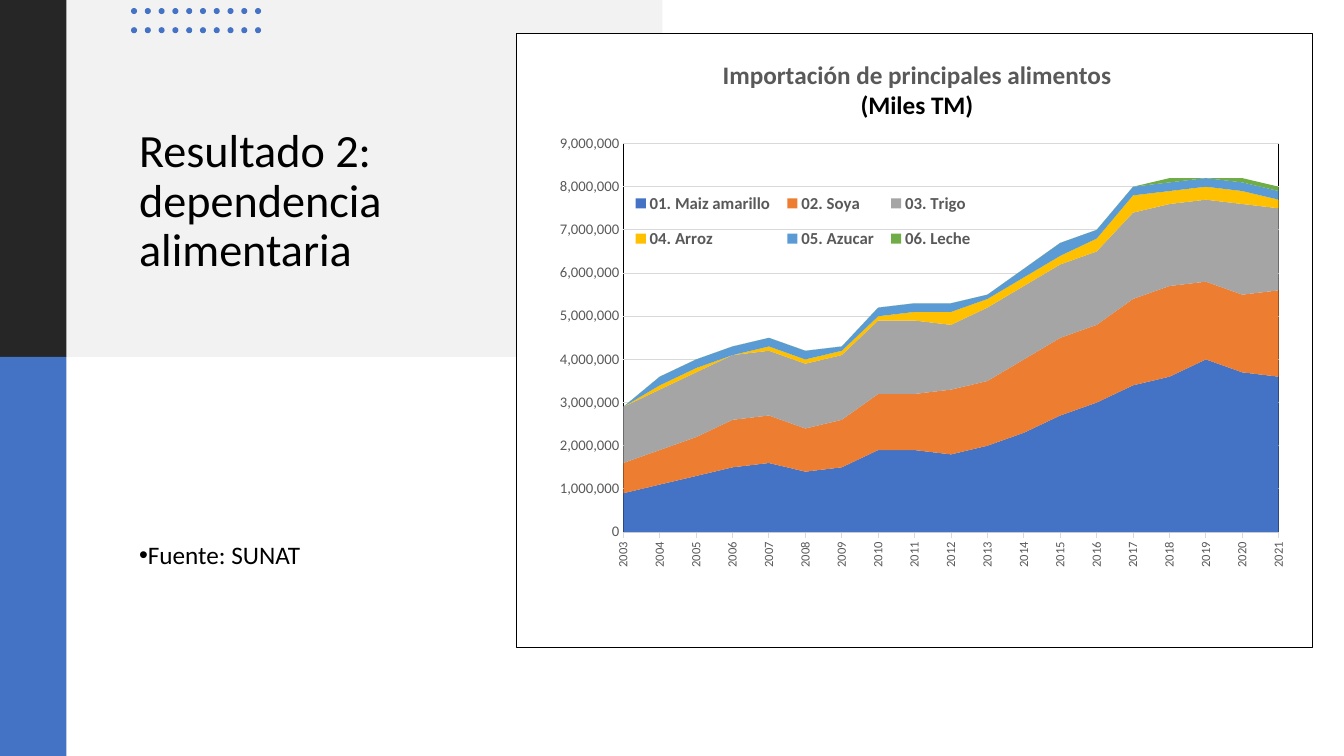
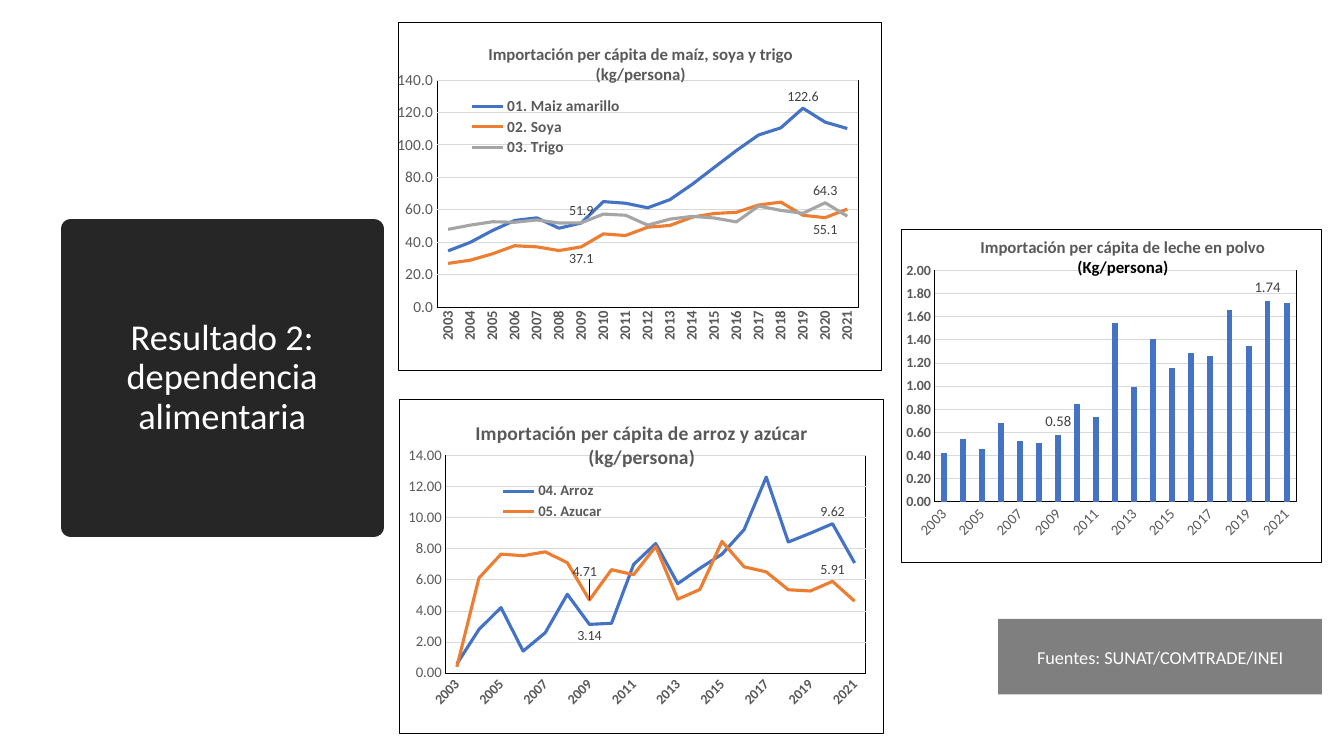
from lxml import etree
from pptx import Presentation
from pptx.chart.data import CategoryChartData
from pptx.dml.color import RGBColor
from pptx.enum.chart import XL_CHART_TYPE, XL_LABEL_POSITION, XL_LEGEND_POSITION, XL_TICK_MARK
from pptx.enum.shapes import MSO_SHAPE
from pptx.enum.text import MSO_ANCHOR, MSO_AUTO_SIZE, PP_ALIGN
from pptx.oxml import parse_xml
from pptx.oxml.ns import nsdecls, qn
from pptx.util import Inches, Pt

FONT = "Calibri"
BLACK, WHITE, DARK, PALE = "000000", "FFFFFF", "262626", "F2F2F2"
GRAY, LABEL_GRAY, GRID = "595959", "404040", "D9D9D9"
BLUE, ORANGE, SILVER = "4472C4", "ED7D31", "A5A5A5"
GOLD, SKY, GREEN = "FFC000", "5B9BD5", "70AD47"
HEADING = "Resultado 2: dependencia alimentaria"
YEARS = [str(year) for year in range(2003, 2022)]
ABOVE, BELOW = XL_LABEL_POSITION.ABOVE, XL_LABEL_POSITION.BELOW
OUTSIDE = XL_LABEL_POSITION.OUTSIDE_END

FOOD_IMPORTS = [
    ("01. Maiz amarillo", BLUE, [9, 11, 13, 15, 16, 14, 15, 19, 19, 18, 20, 23, 27, 30, 34, 36, 40, 37, 36]),
    ("02. Soya", ORANGE, [7, 8, 9, 11, 11, 10, 11, 13, 13, 15, 15, 17, 18, 18, 20, 21, 18, 18, 20]),
    ("03. Trigo", SILVER, [13, 14, 15, 15, 15, 15, 15, 17, 17, 15, 17, 17, 17, 17, 20, 19, 19, 21, 19]),
    ("04. Arroz", GOLD, [0, 1, 1, 0, 1, 1, 1, 1, 2, 3, 2, 2, 2, 3, 4, 3, 3, 3, 2]),
    ("05. Azucar", SKY, [0, 2, 2, 2, 2, 2, 1, 2, 2, 2, 1, 2, 3, 2, 2, 2, 2, 2, 2]),
    ("06. Leche", GREEN, [0] * 15 + [1, 0, 1, 1]),
]
GRAINS_PER_CAPITA = [
    ("01. Maiz amarillo", BLUE, [34.6, 39.9, 47.2, 53.4, 55.0, 48.6, 51.8, 65.0, 64.0, 61.2,
                                 66.2, 75.6, 86.1, 96.5, 106.1, 110.5, 122.6, 114.0, 110.1]),
    ("02. Soya", ORANGE, [26.9, 28.9, 32.8, 37.8, 37.1, 34.8, 37.1, 45.1, 44.1, 49.2,
                          50.3, 55.4, 57.7, 58.4, 62.9, 64.7, 56.6, 55.1, 60.4]),
    ("03. Trigo", SILVER, [47.9, 50.5, 52.6, 52.3, 53.7, 51.8, 51.9, 57.3, 56.6, 50.5,
                           54.2, 55.9, 54.9, 52.5, 62.3, 59.6, 57.8, 64.3, 56.0]),
]
RICE_SUGAR_PER_CAPITA = [
    ("04. Arroz", BLUE, [0.59, 2.81, 4.22, 1.42, 2.60, 5.08, 3.14, 3.21, 7.00, 8.34,
                         5.76, 6.75, 7.66, 9.24, 12.62, 8.44, 9.01, 9.62, 7.09]),
    ("05. Azucar", ORANGE, [0.40, 6.12, 7.66, 7.56, 7.81, 7.11, 4.71, 6.66, 6.34, 8.15,
                            4.76, 5.39, 8.48, 6.84, 6.52, 5.37, 5.29, 5.91, 4.63]),
]
MILK_PER_CAPITA = [
    ("Series 1", BLUE, [0.42, 0.54, 0.46, 0.68, 0.53, 0.51, 0.58, 0.85, 0.73, 1.55,
                        0.99, 1.41, 1.16, 1.29, 1.26, 1.66, 1.35, 1.74, 1.72]),
]


def rgb(value):
    return RGBColor.from_string(value)


def box(left, top, width, height):
    return [Inches(length) for length in (left, top, width, height)]


def style_font(font, size, color, bold=False):
    font.name, font.size, font.bold = FONT, Pt(size), bold
    font.color.rgb = rgb(color)


def write_text(frame, text, size, color=BLACK, align=PP_ALIGN.LEFT, spacing=1.0, after=0):
    frame.word_wrap = True
    frame.auto_size = MSO_AUTO_SIZE.NONE
    frame.vertical_anchor = MSO_ANCHOR.MIDDLE
    paragraph = frame.paragraphs[0]
    paragraph.alignment, paragraph.line_spacing = align, spacing
    paragraph.space_before, paragraph.space_after = Pt(0), Pt(after)
    run = paragraph.add_run()
    run.text = text
    style_font(run.font, size, color)
    return paragraph


def place(placeholder, bounds):
    placeholder.left, placeholder.top, placeholder.width, placeholder.height = box(*bounds)


def add_heading(slide, bounds, size, color=BLACK, align=PP_ALIGN.LEFT):
    heading = slide.shapes.title
    place(heading, bounds)
    write_text(heading.text_frame, HEADING, size, color, align, spacing=0.9)
    slide.shapes.element.append(heading.element)
    return heading


def add_block(shapes, bounds, fill, kind=MSO_SHAPE.RECTANGLE, alpha=None):
    block = shapes.add_shape(kind, *box(*bounds))
    block.shadow.inherit = False
    block.fill.solid()
    block.fill.fore_color.rgb = rgb(fill)
    block.line.fill.background()
    if alpha:
        color = block.element.spPr.find(qn("a:solidFill"))[0]
        etree.SubElement(color, qn("a:alpha"), val=str(alpha * 1000))
    return block


def add_dots(slide, columns=10, rows=2):
    dots = slide.shapes.add_group_shape()
    for column in range(columns):
        for row in range(rows):
            left, top = 1.3 + column * 1.23 / (columns - 1), 0.08 + row * 0.19
            add_block(dots.shapes, (left, top, 0.06, 0.06), BLUE, MSO_SHAPE.OVAL)


def add_source_bullet(slide, text):
    source = slide.placeholders[1]
    place(source, (1.28, 3.86, 4.66, 3.32))
    paragraph = write_text(source.text_frame, text, 18, spacing=0.9, after=6)
    properties = paragraph._p.get_or_add_pPr()
    properties.set("marL", "0")
    properties.set("indent", str(-Inches(0.25)))
    etree.SubElement(properties, qn("a:buChar"), char="•")


def set_layout(parent, previous, values, inner=False, offset=False):
    for old in parent.findall(qn("c:layout")):
        parent.remove(old)
    modes = "" if offset else '<c:xMode val="edge"/><c:yMode val="edge"/>'
    target = '<c:layoutTarget val="inner"/>' if inner else ""
    sizes = "".join(f'<c:{key} val="{value}"/>' for key, value in zip("xywh", values))
    layout = parse_xml(f'<c:layout {nsdecls("c")}><c:manualLayout>{target}{modes}{sizes}'
                       '</c:manualLayout></c:layout>')
    if previous:
        parent.find(qn(previous)).addnext(layout)
    else:
        parent.insert(0, layout)


def frame_xml(fill=None):
    paint = f'<a:solidFill><a:srgbClr val="{fill}"/></a:solidFill>' if fill else "<a:noFill/>"
    return parse_xml(f'<c:spPr {nsdecls("c", "a")}>{paint}<a:ln w="{Pt(0.75)}"><a:solidFill>'
                     f'<a:srgbClr val="{BLACK}"/></a:solidFill></a:ln></c:spPr>')


def style_axis_line(line, color):
    line.width = Pt(0.75)
    line.color.rgb = rgb(color)


def style_axes(chart, category, value, rotation, maximum, unit, number_format, between):
    years, amounts = chart.category_axis, chart.value_axis
    years.has_major_gridlines = False
    years.major_tick_mark = XL_TICK_MARK.NONE if between else XL_TICK_MARK.OUTSIDE
    style_axis_line(years.format.line, BLACK if between else GRID)
    style_font(years.tick_labels.font, category[0], GRAY, category[1])
    body = chart.element.find(".//" + qn("c:catAx")).find(".//" + qn("a:bodyPr"))
    body.set("rot", str(rotation * 60000))
    body.set("vert", "horz")
    amounts.minimum_scale, amounts.maximum_scale, amounts.major_unit = 0, maximum, unit
    amounts.major_tick_mark = XL_TICK_MARK.NONE
    amounts.format.line.fill.background()
    amounts.has_major_gridlines = True
    style_axis_line(amounts.major_gridlines.format.line, GRID)
    style_font(amounts.tick_labels.font, value[0], GRAY, value[1])
    amounts.tick_labels.number_format = number_format
    amounts.tick_labels.number_format_is_linked = False
    axis = chart.element.find(".//" + qn("c:valAx"))
    for old in axis.findall(qn("c:crossBetween")):
        axis.remove(old)
    crossing = parse_xml(f'<c:crossBetween {nsdecls("c")} val="{"between" if between else "midCat"}"/>')
    axis.find(qn("c:crosses")).addnext(crossing)


def add_title(chart, lines, size, second_color, position):
    chart.has_title = True
    frame = chart.chart_title.text_frame
    for index, (line, color) in enumerate(zip(lines, (GRAY, second_color))):
        paragraph = frame.add_paragraph() if index else frame.paragraphs[0]
        paragraph.alignment = PP_ALIGN.CENTER
        run = paragraph.add_run()
        run.text = line
        style_font(run.font, size, color, True)
    set_layout(chart.element.find(".//" + qn("c:title")), "c:tx", position)


def add_legend(chart, size, position):
    chart.has_legend = True
    chart.legend.position = XL_LEGEND_POSITION.BOTTOM
    chart.legend.include_in_layout = False
    style_font(chart.legend.font, size, GRAY, True)
    set_layout(chart.element.find(".//" + qn("c:legend")), "c:legendPos", position)


def add_point_labels(series, labels, size):
    series.data_labels.show_value = False
    for index, position in labels:
        label = series.points[index].data_label
        style_font(label.font, size, LABEL_GRAY)
        label.position = position


def nudge_label(chart, series_index, point_index, offset):
    series = chart.element.findall(".//" + qn("c:ser"))[series_index]
    for label in series.iter(qn("c:dLbl")):
        if label.find(qn("c:idx")).get("val") == str(point_index):
            set_layout(label, "c:idx", offset, offset=True)


def add_import_chart(slide, kind, bounds, rows, plot_box, title, axes, legend=None,
                     labels=(), label_size=10, scale=1):
    data = CategoryChartData(number_format=axes["number_format"])
    data.categories = YEARS
    for name, _, values in rows:
        data.add_series(name, [value * scale for value in values])
    chart = slide.shapes.add_chart(kind, *box(*bounds), data).chart
    style_font(chart.font, 10, BLACK)
    chart.has_legend = False
    add_title(chart, *title)
    if legend:
        add_legend(chart, *legend)
    style_axes(chart, between=kind != XL_CHART_TYPE.AREA_STACKED, **axes)
    plot = chart.plots[0]
    plot.vary_by_categories = False
    for series, (_, color, _) in zip(plot.series, rows):
        if kind == XL_CHART_TYPE.LINE:
            series.smooth = False
            series.format.line.width = Pt(2.25)
            series.format.line.color.rgb = rgb(color)
        else:
            series.format.fill.solid()
            series.format.fill.fore_color.rgb = rgb(color)
    for series, points in zip(plot.series, labels):
        add_point_labels(series, points, label_size)
    if kind == XL_CHART_TYPE.COLUMN_CLUSTERED:
        plot.gap_width, plot.overlap = 219, -27
    area = chart.element.find(".//" + qn("c:plotArea"))
    set_layout(area, None, plot_box, inner=True)
    area.append(frame_xml())
    chart.element.find(qn("c:chart")).addnext(frame_xml(WHITE))
    return chart


def build_total_imports(deck):
    slide = deck.slides.add_slide(deck.slide_layouts[1])
    add_block(slide.shapes, (0, 0, 6.57, 3.54), PALE)
    add_heading(slide, (1.28, 0.79, 4.66, 2.43), 33)
    add_block(slide.shapes, (0, 0, 0.66, 3.54), DARK)
    add_dots(slide)
    add_block(slide.shapes, (0, 3.54, 0.66, 3.96), BLUE)
    add_source_bullet(slide, "Fuente: SUNAT")
    add_import_chart(
        slide, XL_CHART_TYPE.AREA_STACKED, (5.12, 0.33, 7.9, 6.1), FOOD_IMPORTS,
        (0.134, 0.179, 0.824, 0.633),
        (("Importación de principales alimentos", "(Miles TM)"), 18, BLACK, (0.255, 0.035)),
        dict(category=(9, False), value=(10.5, False), rotation=-90,
             maximum=9000000, unit=1000000, number_format="#,##0"),
        legend=(12, (0.135, 0.235, 0.45, 0.14)), scale=100000)


def build_per_capita_imports(deck):
    slide = deck.slides.add_slide(deck.slide_layouts[5])
    heading = add_heading(slide, (0.7, 2.27, 3.01, 2.96), 26, WHITE, PP_ALIGN.CENTER)
    heading.fill.solid()
    heading.fill.fore_color.rgb = rgb(DARK)
    heading.line.width = Pt(13.75)
    heading.line.color.rgb = rgb(DARK)
    etree.SubElement(heading.element.spPr.find(qn("a:ln")), qn("a:round"))
    add_import_chart(
        slide, XL_CHART_TYPE.LINE, (3.94, 0.22, 4.81, 3.46), GRAINS_PER_CAPITA,
        (0.08, 0.165, 0.872, 0.653),
        (("Importación per cápita de maíz, soya y trigo", "(kg/persona)"), 12, GRAY, (0.18, 0.05)),
        dict(category=(10.5, True), value=(11, False), rotation=-90,
             maximum=140, unit=20, number_format="0.0"),
        legend=(11, (0.14, 0.21, 0.33, 0.18)),
        labels=([(16, ABOVE)], [(6, BELOW), (17, BELOW)], [(6, ABOVE), (17, ABOVE)]))
    rice_sugar = add_import_chart(
        slide, XL_CHART_TYPE.LINE, (3.96, 3.96, 4.81, 3.32), RICE_SUGAR_PER_CAPITA,
        (0.095, 0.168, 0.868, 0.652),
        (("Importación per cápita de arroz y azúcar", "(kg/persona)"), 14, GRAY, (0.15, 0.05)),
        dict(category=(10, True), value=(10.5, False), rotation=-45,
             maximum=14, unit=2, number_format="0.00"),
        legend=(10.5, (0.2, 0.24, 0.23, 0.13)),
        labels=([(6, BELOW), (17, ABOVE)], [(6, ABOVE), (17, ABOVE)]))
    nudge_label(rice_sugar, 1, 6, (-0.01, -0.05))
    add_import_chart(
        slide, XL_CHART_TYPE.COLUMN_CLUSTERED, (8.94, 2.27, 4.17, 3.32), MILK_PER_CAPITA,
        (0.078, 0.124, 0.862, 0.693),
        (("Importación per cápita de leche en polvo", "(Kg/persona)"), 12, BLACK, (0.18, 0.01)),
        dict(category=(10.5, False), value=(10, True), rotation=-45,
             maximum=2, unit=0.2, number_format="0.00"),
        labels=([(6, OUTSIDE), (17, OUTSIDE)],), label_size=10.5)
    sources = add_block(slide.shapes, (9.9, 6.14, 3.21, 0.75), BLACK, alpha=50)
    write_text(sources.text_frame, "Fuentes: SUNAT/COMTRADE/INEI", 13, WHITE, PP_ALIGN.CENTER, after=6)


def main():
    deck = Presentation()
    deck.slide_width, deck.slide_height = Inches(13.33), Inches(7.5)
    build_total_imports(deck)
    build_per_capita_imports(deck)
    deck.save("out.pptx")


if __name__ == "__main__":
    main()
